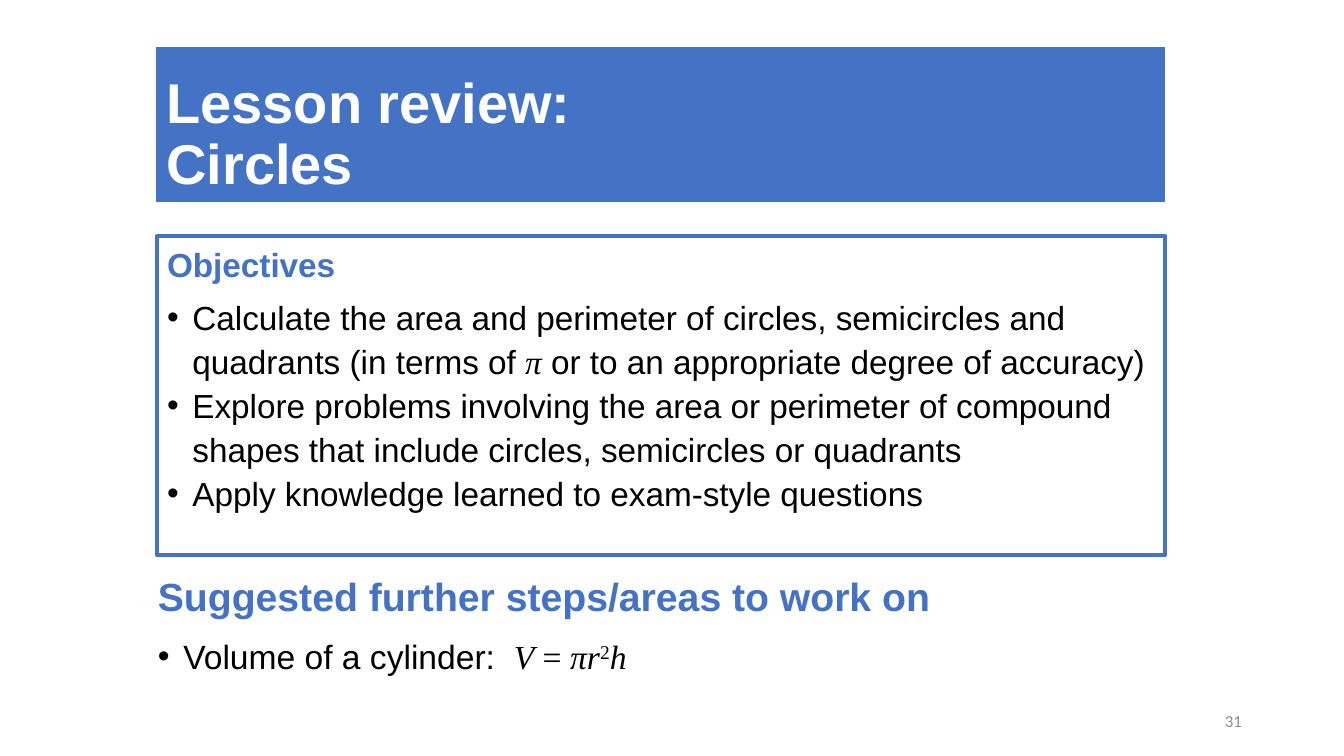
from lxml.etree import SubElement
from pptx import Presentation
from pptx.dml.color import RGBColor
from pptx.enum.shapes import MSO_SHAPE as Shape
from pptx.enum.text import MSO_ANCHOR as Anchor, MSO_AUTO_SIZE as AutoSize, PP_ALIGN as Align
from pptx.oxml.ns import qn
from pptx.util import Cm, Pt

COLOURS = {"accent": "4472C4", "text": "000000", "light": "FFFFFF", "number": "8C8C8C"}
HEADING = {"line_spacing": Pt(31), "space_before": Pt(10), "space_after": Pt(6)}
MATHS = {"name": "Times New Roman"}
ITALIC = {**MATHS, "italic": True}

OBJECTIVES = [
    [("Calculate the area and perimeter of circles, semicircles and quadrants (in terms of ", {}),
     ("π", ITALIC), (" or to an appropriate degree of accuracy)", {})],
    [("Explore problems involving the area or perimeter of compound shapes "
      "that include circles, semicircles or quadrants", {})],
    [("Apply knowledge learned to exam-style questions", {})],
]
NEXT_STEPS = [
    [("Volume of a cylinder:  ", {}), ("V", ITALIC), (" = ", MATHS), ("πr", ITALIC),
     ("2", {**MATHS, "baseline": 30000}), ("h", ITALIC)],
]


def colour(name):
    return RGBColor.from_string(COLOURS[name])


def set_all(target, values):
    for name, value in values.items():
        setattr(target, name, value)


def add_span(para, text, ink, **values):
    span = para.add_run()
    span.text = text
    baseline = values.pop("baseline", None)
    set_all(span.font, {"name": "Arial", **values})
    span.font.color.rgb = colour(ink)
    if baseline:
        span.font._element.set("baseline", str(baseline))


def add_bullet(para):
    props = para._p.get_or_add_pPr()
    props.set("marL", str(Cm(0.64)))
    props.set("indent", str(-Cm(0.64)))
    SubElement(props, qn("a:buFont")).set("typeface", "Arial")
    SubElement(props, qn("a:buChar")).set("char", "•")


def fill_section(frame, heading, heading_size, items, item_size, spacing):
    set_all(frame, {"word_wrap": True, "vertical_anchor": Anchor.TOP})
    para = frame.paragraphs[0]
    set_all(para, {"alignment": Align.LEFT, **HEADING})
    add_span(para, heading, "accent", size=Pt(heading_size), bold=True)
    for item in items:
        para = frame.add_paragraph()
        set_all(para, {"alignment": Align.LEFT, "line_spacing": spacing})
        add_bullet(para)
        for text, values in item:
            add_span(para, text, "text", size=Pt(item_size), **values)


def add_title(page, left, top, width, height):
    title = page.shapes.title
    set_all(title, {"left": left, "top": top, "width": width, "height": height})
    title.fill.solid()
    title.fill.fore_color.rgb = colour("accent")
    title.line.color.rgb = colour("accent")
    title.line.width = Pt(0.75)
    frame = title.text_frame
    set_all(frame, {"auto_size": AutoSize.NONE, "word_wrap": True,
                    "vertical_anchor": Anchor.BOTTOM})
    para = frame.paragraphs[0]
    set_all(para, {"alignment": Align.LEFT, "line_spacing": 0.9, "space_before": Pt(0)})
    style = {"size": Pt(40), "bold": True}
    add_span(para, "Lesson review:", "light", **style)
    para.add_line_break()
    add_span(para, "Circles", "light", **style)


def add_objectives(page, left, top, width, height):
    box = page.shapes.add_shape(Shape.RECTANGLE, left, top, width, height)
    box.shadow.inherit = False
    box.fill.background()
    box.line.color.rgb = colour("accent")
    box.line.width = Pt(3)
    fill_section(box.text_frame, "Objectives", 23.8, OBJECTIVES, 23.8, 1.1)


def add_next_steps(page, left, top, width, height):
    box = page.shapes.add_textbox(left, top, width, height)
    fill_section(box.text_frame, "Suggested further steps/areas to work on", 28,
                 NEXT_STEPS, 24, 1.2)


def add_page_number(page, left, top, width, height):
    frame = page.shapes.add_textbox(left, top, width, height).text_frame
    set_all(frame, {"word_wrap": True, "vertical_anchor": Anchor.MIDDLE})
    para = frame.paragraphs[0]
    para.alignment = Align.RIGHT
    add_span(para, "31", "number", name="Calibri", size=Pt(12))


def main():
    deck = Presentation()
    set_all(deck, {"slide_width": Cm(33.87), "slide_height": Cm(19.05)})
    page = deck.slides.add_slide(deck.slide_layouts.get_by_name("Title Only"))
    add_title(page, Cm(3.94), Cm(1.19), Cm(25.4), Cm(3.89))
    add_page_number(page, Cm(23.93), Cm(17.65), Cm(7.62), Cm(1.02))
    add_objectives(page, Cm(3.96), Cm(5.95), Cm(25.4), Cm(8.03))
    add_next_steps(page, Cm(3.73), Cm(14.38), Cm(25.4), Cm(4.88))
    deck.save("out.pptx")


if __name__ == "__main__":
    main()
